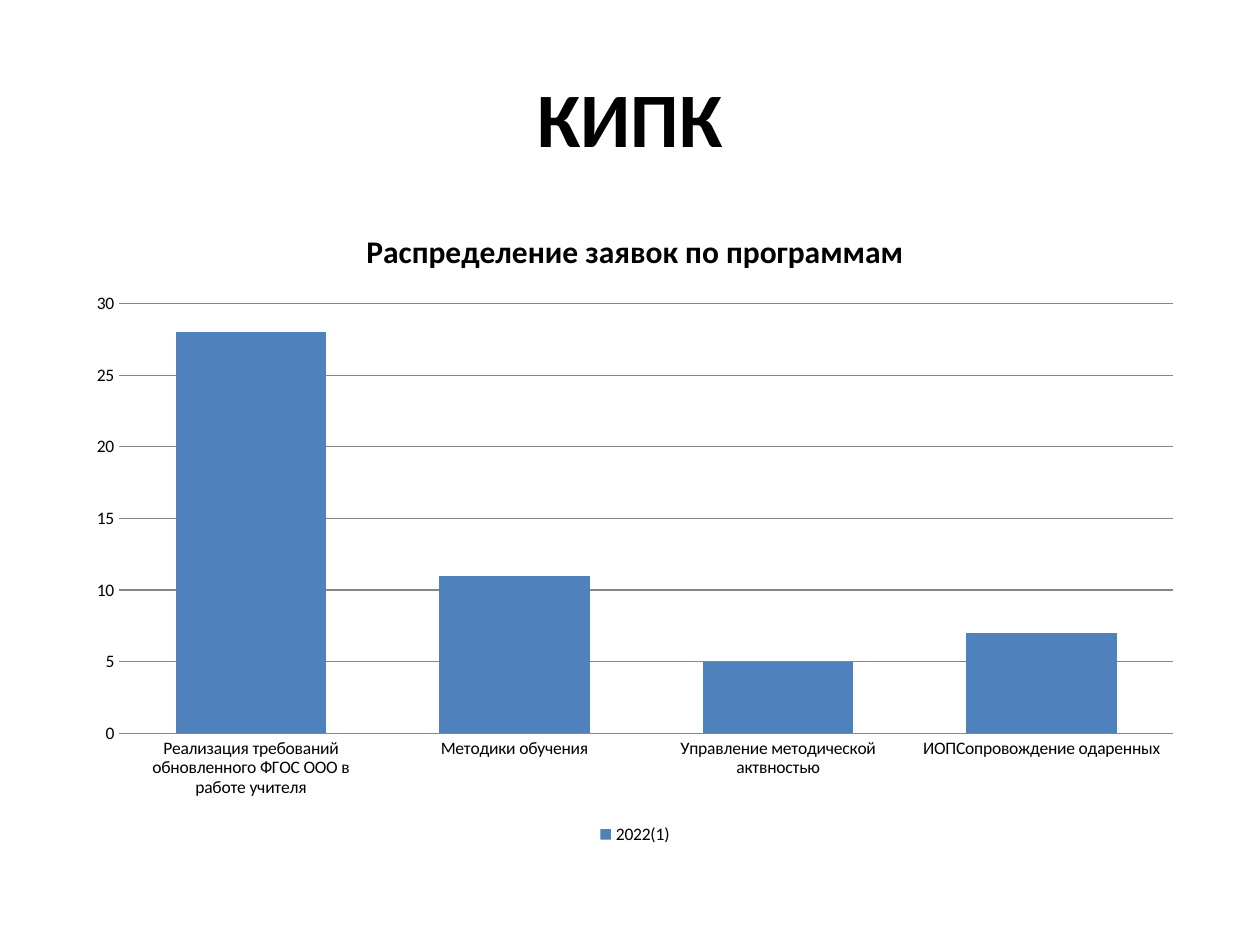
"""Build the КИПК slide with a column chart of applications by programme."""
from pptx import Presentation
from pptx import util as u
from pptx.chart import data
from pptx.dml import color
from pptx.enum import chart as charts, text

BLACK = color.RGBColor(0x00, 0x00, 0x00)
BLUE = color.RGBColor(0x4F, 0x81, 0xBD)
GREY = color.RGBColor(0x86, 0x86, 0x86)
FONT = "Calibri"
APPLICATIONS = {
    "Реализация требований обновленного ФГОС ООО в работе учителя": 28,
    "Методики обучения": 11,
    "Управление методической актвностью": 5,
    "ИОПСопровождение одаренных": 7,
}


def style_font(font, size, bold=False):
    """Set the shared typeface and colour at the given size."""
    font.name = FONT
    font.size = u.Pt(size)
    font.bold = bold
    font.color.rgb = BLACK


def add_title(slide, wording):
    """Place and fill the slide title."""
    title = slide.shapes.title
    title.left, title.top = u.Inches(0.5), u.Inches(0.3)
    title.width, title.height = u.Inches(9), u.Inches(1.25)
    title.text_frame.vertical_anchor = text.MSO_ANCHOR.MIDDLE
    paragraph = title.text_frame.paragraphs[0]
    paragraph.alignment = text.PP_ALIGN.CENTER
    run = paragraph.add_run()
    run.text = wording
    style_font(run.font, 44, bold=True)


def style_line(line):
    """Draw a thin grey axis or grid line."""
    line.color.rgb = GREY
    line.width = u.Pt(0.75)


def style_axes(chart):
    """Format the category and value axes."""
    for axis in (chart.category_axis, chart.value_axis):
        axis.major_tick_mark = charts.XL_TICK_MARK.NONE
        axis.minor_tick_mark = charts.XL_TICK_MARK.NONE
        style_font(axis.tick_labels.font, 10)
    style_line(chart.category_axis.format.line)
    value_axis = chart.value_axis
    value_axis.minimum_scale, value_axis.maximum_scale = 0, 30
    value_axis.major_unit = 5
    value_axis.has_major_gridlines = True
    style_line(value_axis.major_gridlines.format.line)
    value_axis.format.line.fill.background()


def add_column_chart(slide, heading, series_name, values):
    """Add a clustered column chart with a heading and bottom legend."""
    chart_data = data.CategoryChartData()
    chart_data.categories = list(values)
    chart_data.add_series(series_name, list(values.values()))
    chart = slide.shapes.add_chart(
        charts.XL_CHART_TYPE.COLUMN_CLUSTERED,
        u.Inches(0.59), u.Inches(1.62), u.Inches(8.9), u.Inches(5.12),
        chart_data,
    ).chart
    style_font(chart.font, 10)
    chart.has_title = True
    run = chart.chart_title.text_frame.paragraphs[0].add_run()
    run.text = heading
    style_font(run.font, 18, bold=True)
    chart.chart_title.include_in_layout = False
    chart.has_legend = True
    chart.legend.position = charts.XL_LEGEND_POSITION.BOTTOM
    chart.legend.include_in_layout = False
    style_font(chart.legend.font, 10)
    plot = chart.plots[0]
    plot.gap_width, plot.overlap = 75, -25
    plot.vary_by_categories = False
    fill = plot.series[0].format.fill
    fill.solid()
    fill.fore_color.rgb = BLUE
    style_axes(chart)


def main():
    """Create and save the presentation."""
    presentation = Presentation()
    presentation.slide_width = u.Inches(10)
    presentation.slide_height = u.Inches(7.5)
    slide = presentation.slides.add_slide(presentation.slide_layouts[5])
    add_title(slide, "КИПК")
    add_column_chart(
        slide, "Распределение заявок по программам", "2022(1)", APPLICATIONS)
    presentation.save("out.pptx")


if __name__ == "__main__":
    main()
